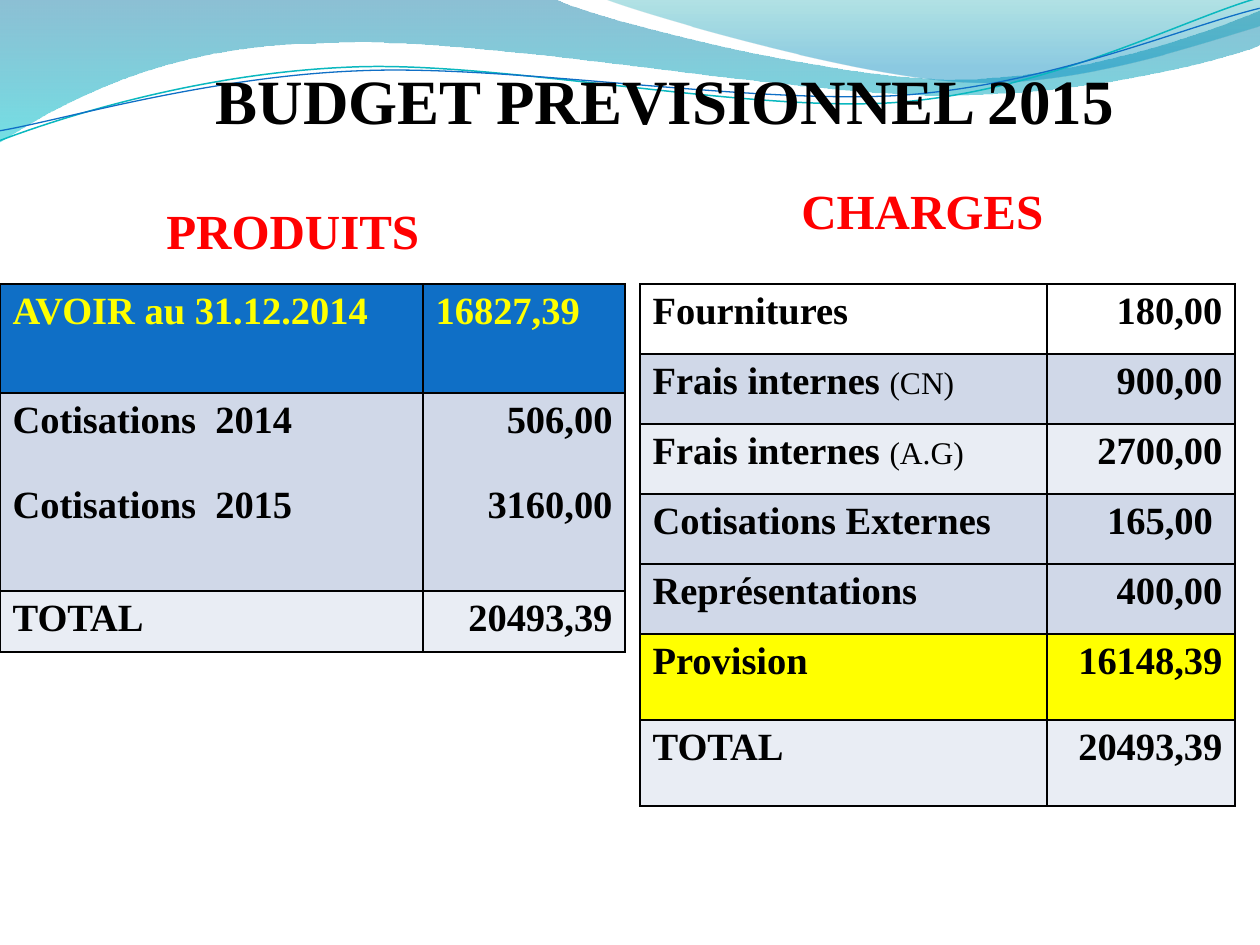
import pptx
import pptx.dml.color
import pptx.enum.text
import pptx.oxml
import pptx.oxml.ns
import pptx.util
from lxml import etree

PX = 914400 / 126
FONT = "Times New Roman"
BLACK, RED, YELLOW, BLUE = "000000", "FF0000", "FFFF00", "0F6FC6"
WHITE, BAND, PALE = "FFFFFF", "D0D8E8", "E9EDF4"
LEFT, CENTER, RIGHT = (pptx.enum.text.PP_ALIGN.LEFT, pptx.enum.text.PP_ALIGN.CENTER,
                       pptx.enum.text.PP_ALIGN.RIGHT)

# Each outline: start point, then line ends (2 numbers) or Bézier curves (6 numbers).
LARGE_WAVE = [(0, -1), (554, -1), (600, 21, 837, 79, 955, 79), (1075, 79, 1207, 33, 1260, 11),
              (1261, 45), (1239, 55, 1096, 96, 940, 95), (784, 95, 481, 35, 324, 43),
              (163, 44, 58, 105, -1, 142), (0, -1)]
SMALL_WAVE = [(604, -1), (641, 14, 859, 78, 969, 82), (1079, 87, 1211, 40, 1260, 26),
              (1260, 0), (604, -1)]
# The two lines are given level and then turned.
LINE_ROTATION = 357.3
TEAL_LINE = [(-3, 111), (58, 91, 199, 53, 350, 54), (499, 54, 745, 119, 896, 115),
             (1049, 110, 1184, 46, 1260, 28)]
BLUE_LINE = [(-2, 101), (57, 94, 207, 57, 357, 58), (509, 58, 750, 111, 902, 108),
             (1052, 104, 1188, 52, 1262, 38)]

# Each row: height, fill, text colour, label lines, amount lines, amount alignment.
INCOME = [
    (109, BLUE, YELLOW, ["AVOIR au 31.12.2014"], ["16827,39"], LEFT),
    (198, BAND, BLACK, ["Cotisations  2014", "Cotisations  2015"], ["506,00", "3160,00"], RIGHT),
    (61, PALE, BLACK, ["TOTAL"], ["20493,39"], RIGHT),
]
EXPENSES = [
    (height, fill, BLACK, [label], [amount], RIGHT)
    for height, fill, label, amount in [
        (70, WHITE, "Fournitures", "180,00"),
        (70, BAND, "Frais internes (CN)", "900,00"),
        (70, PALE, "Frais internes (A.G)", "2700,00"),
        (70, BAND, "Cotisations Externes", "165,00 "),
        (70, BAND, "Représentations", "400,00"),
        (86, YELLOW, "Provision", "16148,39"),
        (86, PALE, "TOTAL", "20493,39"),
    ]
]


def px(length):
    return pptx.util.Emu(round(length * PX))


def rgb(color):
    return pptx.dml.color.RGBColor.from_string(color)


def style(font, size, color, bold=True):
    font.name, font.size, font.bold = FONT, pptx.util.Pt(size), bold
    font.color.rgb = rgb(color)


def add_outline(page, outline, close):
    """Build the outline through its end points, then bend the segments that are curves."""
    start, *ends = [(px(part[-2]), px(part[-1])) for part in outline]
    builder = page.shapes.build_freeform(*start)
    builder.add_line_segments(ends, close=close)
    shape = builder.convert_to_shape()
    shape.shadow.inherit = False
    segments = list(shape.element.spPr.iter(pptx.oxml.ns.qn("a:lnTo")))
    for segment, part in zip(segments, outline[1:]):
        if len(part) == 6:
            segment.getparent().replace(segment, make_curve(part, shape.left, shape.top))
    return shape


def make_curve(part, left, top):
    curve = etree.Element(pptx.oxml.ns.qn("a:cubicBezTo"))
    for x, y in zip(part[::2], part[1::2]):
        etree.SubElement(curve, pptx.oxml.ns.qn("a:pt"), x=str(px(x) - left), y=str(px(y) - top))
    return curve


def add_wave(page, outline, stops):
    """Add a filled wave; stops are (position, colour, opacity in percent), top to bottom."""
    wave = add_outline(page, outline, True)
    wave.line.fill.background()
    wave.fill.gradient()
    wave.fill.gradient_angle = 270
    for stop, (position, color, opacity) in zip(wave.fill.gradient_stops, stops):
        stop.position = position
        stop.color.rgb = rgb(color)
    colors = wave.element.spPr.iter(pptx.oxml.ns.qn("a:srgbClr"))
    for element, (position, color, opacity) in zip(colors, stops):
        etree.SubElement(element, pptx.oxml.ns.qn("a:alpha"), val=str(opacity * 1000))


def add_wave_line(page, outline, color, width):
    curve = add_outline(page, outline, False)
    curve.rotation = LINE_ROTATION
    curve.fill.background()
    curve.line.color.rgb = rgb(color)
    curve.line.width = pptx.util.Pt(width)


def add_title(page, text):
    title = page.shapes.title
    title.element.getparent().append(title.element)  # in front of the waves
    title.left, title.top, title.width, title.height = px(174), px(55), px(982), px(89)
    title.text_frame.text = text
    title.text_frame.vertical_anchor = pptx.enum.text.MSO_ANCHOR.TOP
    paragraph = title.text_frame.paragraphs[0]
    paragraph.alignment = CENTER
    style(paragraph.font, 36, BLACK)


def add_heading(page, text, left, top, width):
    box = page.shapes.add_textbox(px(left), px(top), px(width), px(72))
    box.text_frame.word_wrap = True
    box.text_frame.text = text
    style(box.text_frame.paragraphs[0].font, 28, RED)


def add_borders(cell):
    properties = cell._tc.get_or_add_tcPr()
    for index, side in enumerate(("lnL", "lnR", "lnT", "lnB")):
        properties.insert(index, pptx.oxml.parse_xml(
            f'<a:{side} {pptx.oxml.ns.nsdecls("a")} w="12700"><a:solidFill>'
            f'<a:srgbClr val="{BLACK}"/></a:solidFill></a:{side}>'))


def fill_cell(cell, lines, fill, color, alignment):
    cell.fill.solid()
    cell.fill.fore_color.rgb = rgb(fill)
    add_borders(cell)
    cell.text = "\n".join(lines)
    for index, para in enumerate(cell.text_frame.paragraphs):
        para.alignment = alignment
        if index:
            para.space_before = pptx.util.Pt(24.5)
        label, bracket, note = lines[index].partition("(")
        if bracket:
            para.runs[0].text = label
            style(para.runs[0].font, 22, color)
            span = para.add_run()
            span.text = bracket + note
            style(span.font, 18, color, bold=False)
        else:
            style(para.font, 22, color)


def add_budget_table(page, left, top, widths, rows):
    height = sum(row[0] for row in rows)
    table = page.shapes.add_table(len(rows), len(widths), px(left), px(top),
                                  px(sum(widths)), px(height)).table
    table.first_row = table.horz_banding = False
    for column, width in zip(table.columns, widths):
        column.width = px(width)
    for index, (row_height, fill, color, labels, amounts, alignment) in enumerate(rows):
        table.rows[index].height = px(row_height)
        fill_cell(table.cell(index, 0), labels, fill, color, LEFT)
        fill_cell(table.cell(index, 1), amounts, fill, color, alignment)


def main():
    deck = pptx.Presentation()
    deck.slide_width, deck.slide_height = px(1260), px(945)
    page = deck.slides.add_slide(deck.slide_layouts.get_by_name("Title Only"))
    add_wave(page, LARGE_WAVE, [(0, "0074A1", 45), (1, "00C6CF", 55)])
    add_wave(page, SMALL_WAVE, [(0, "00A1A9", 30), (0.8, "008BBF", 45)])
    add_wave_line(page, TEAL_LINE, "0AB8BF", 0.85)
    add_wave_line(page, BLUE_LINE, BLUE, 0.75)
    add_title(page, "BUDGET PREVISIONNEL 2015")
    add_heading(page, "PRODUITS", 154, 194, 287)
    add_heading(page, "CHARGES", 789, 174, 277)
    add_budget_table(page, 0, 284, (423, 202), INCOME)
    add_budget_table(page, 640, 284, (407, 188), EXPENSES)
    deck.save("out.pptx")


if __name__ == "__main__":
    main()
